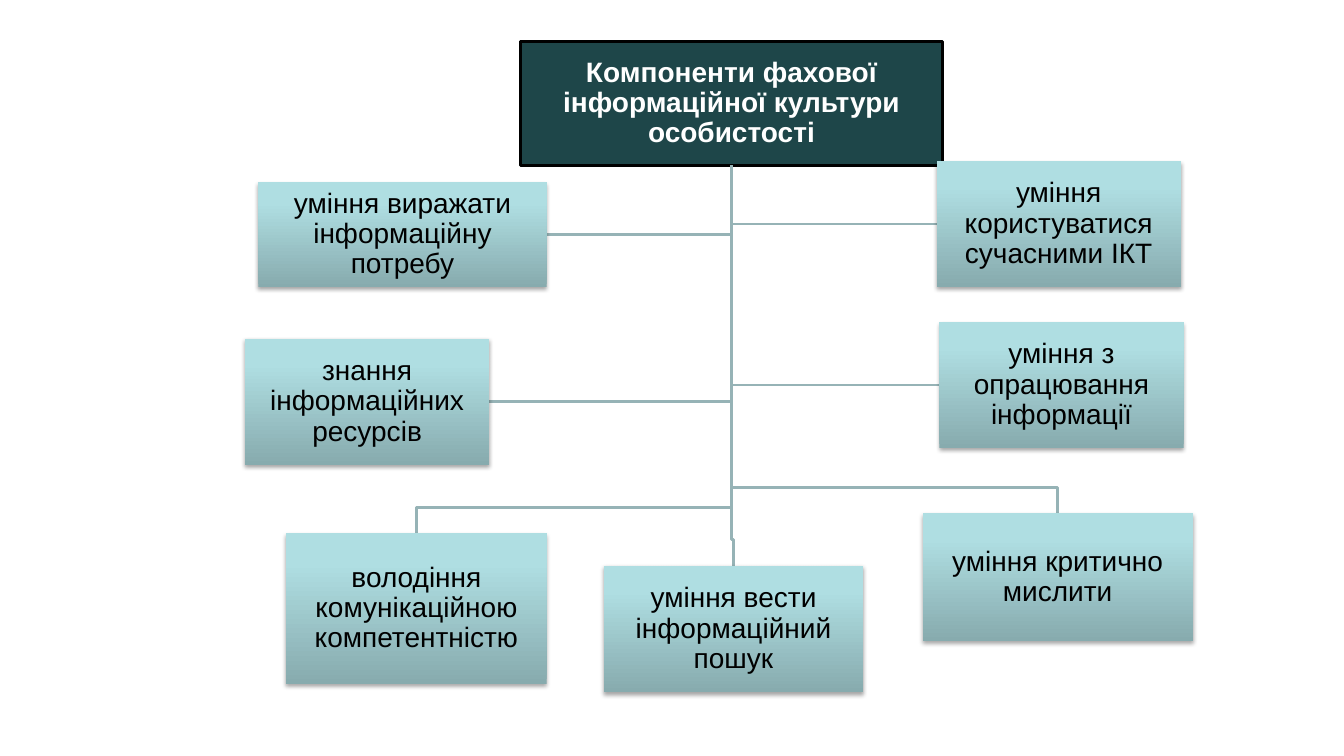
import pptx
import pptx.dml.color
import pptx.enum.shapes
import pptx.enum.text
import pptx.oxml
import pptx.oxml.ns
import pptx.util

Pt = pptx.util.Pt

TITLE = "Компоненти фахової інформаційної культури особистості"
TITLE_BOX = (371.5, 29.5, 302, 88.5)

# text, (left, top, width, height), side of the box where its branch arrives
COMPONENTS = [
    ("володіння комунікаційною компетентністю", (204.5, 381, 186, 107.5), "top"),
    ("уміння вести інформаційний пошук", (431.5, 404, 185, 90.5), "top"),
    ("уміння критично мислити", (659, 366.5, 193, 91.5), "top"),
    ("уміння виражати інформаційну потребу", (184.5, 130, 206, 75), "right"),
    ("уміння з опрацювання інформації", (671, 230, 174.5, 90), "left"),
    ("знання інформаційних ресурсів", (175, 242, 174.5, 90), "right"),
    ("уміння користуватися сучасними ІКТ", (669, 115, 174.5, 90), "left"),
]
TURN_GAP = 18.5  # height of the last bend above a box entered from the top

THEME = {
    "font": "Arial",
    "size": 20,
    "title_fill": "1E4649",
    "title_line": "000000",
    "title_text": "FFFFFF",
    "text": "000000",
    "branch": "96B3B6",
    "line_width": 2,
    "gradient": [(0, "87ABAE"), (80, "AFDEE2"), (100, "AFE0E4")],
    "shadow": {"color": "000000", "alpha": 35, "blur": 3.1, "distance": 1.8},
}


def color(name):
    return pptx.dml.color.RGBColor.from_string(THEME[name])


def set_line(shape, name):
    shape.line.color.rgb = color(name)
    shape.line.width = Pt(THEME["line_width"])


def write_text(shape, text, color_name, bold):
    frame = shape.text_frame
    frame_format = {
        "word_wrap": True,
        "auto_size": pptx.enum.text.MSO_AUTO_SIZE.NONE,
        "vertical_anchor": pptx.enum.text.MSO_ANCHOR.MIDDLE,
    }
    for side in ("left", "top", "right", "bottom"):
        frame_format["margin_" + side] = Pt(1)
    for name, value in frame_format.items():
        setattr(frame, name, value)
    frame.text = text
    paragraph = frame.paragraphs[0]
    paragraph.alignment = pptx.enum.text.PP_ALIGN.CENTER
    paragraph.line_spacing = 0.9
    paragraph.space_before = Pt(0)
    font_format = {"name": THEME["font"], "size": Pt(THEME["size"]), "bold": bold}
    for name, value in font_format.items():
        setattr(paragraph.font, name, value)
    paragraph.font.color.rgb = color(color_name)


def add_title(slide):
    title = slide.shapes.title
    for name, value in zip(("left", "top", "width", "height"), TITLE_BOX):
        setattr(title, name, Pt(value))
    title.fill.solid()
    title.fill.fore_color.rgb = color("title_fill")
    set_line(title, "title_line")
    write_text(title, TITLE, "title_text", True)


def branch_points(box, side):
    """Corners of the branch from the bottom of the title to one box."""
    left, top, width, height = box
    spine = TITLE_BOX[0] + TITLE_BOX[2] / 2
    start = (spine, TITLE_BOX[1] + TITLE_BOX[3])
    if side == "top":
        center, turn = left + width / 2, top - TURN_GAP
        return [start, (spine, turn), (center, turn), (center, top)]
    middle = top + height / 2
    end = left if side == "left" else left + width
    return [start, (spine, middle), (end, middle)]


def add_branch(slide, box, side):
    points = [(Pt(x), Pt(y)) for x, y in branch_points(box, side)]
    builder = slide.shapes.build_freeform(*points[0])
    builder.add_line_segments(points[1:], close=False)
    branch = builder.convert_to_shape()
    branch.fill.background()
    set_line(branch, "branch")
    branch.shadow.inherit = False


def add_gradient_and_shadow(shape):
    namespace = pptx.oxml.ns.nsdecls("a")
    stops = "".join(
        f'<a:gs pos="{position * 1000}"><a:srgbClr val="{value}"/></a:gs>'
        for position, value in THEME["gradient"]
    )
    gradient = pptx.oxml.parse_xml(
        f'<a:gradFill {namespace} rotWithShape="1"><a:gsLst>{stops}</a:gsLst>'
        '<a:lin ang="16200000" scaled="0"/></a:gradFill>'
    )
    shadow = THEME["shadow"]
    outer = pptx.oxml.parse_xml(
        f'<a:outerShdw {namespace} blurRad="{Pt(shadow["blur"])}" '
        f'dist="{Pt(shadow["distance"])}" dir="5400000" rotWithShape="0">'
        f'<a:srgbClr val="{shadow["color"]}">'
        f'<a:alpha val="{shadow["alpha"] * 1000}"/></a:srgbClr></a:outerShdw>'
    )
    shape.shadow.inherit = False
    properties = shape._element.spPr
    properties.find(pptx.oxml.ns.qn("a:prstGeom")).addnext(gradient)
    properties.find(pptx.oxml.ns.qn("a:effectLst")).append(outer)


def add_component(slide, text, box):
    shape = slide.shapes.add_shape(
        pptx.enum.shapes.MSO_SHAPE.RECTANGLE, *[Pt(value) for value in box]
    )
    shape.line.fill.background()
    add_gradient_and_shadow(shape)
    write_text(shape, text, "text", False)


def main():
    presentation = pptx.Presentation()
    presentation.slide_width = Pt(960)
    presentation.slide_height = Pt(540)
    slide = presentation.slides.add_slide(presentation.slide_layouts[5])
    add_title(slide)
    for text, box, side in COMPONENTS:
        add_branch(slide, box, side)
    for text, box, side in COMPONENTS:
        add_component(slide, text, box)
    presentation.save("out.pptx")


if __name__ == "__main__":
    main()
